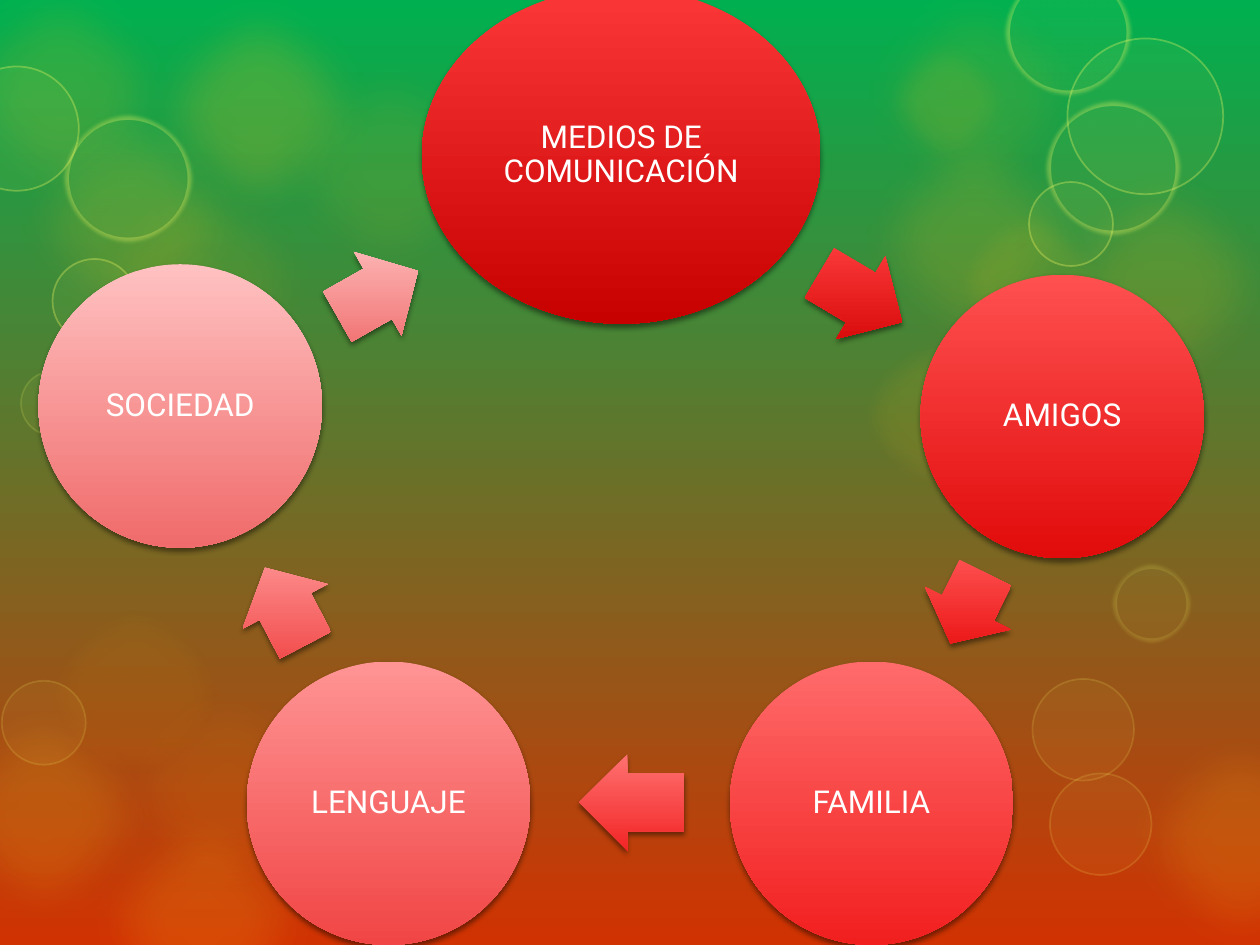
import pptx
import pptx.util
import pptx.dml.color
import pptx.enum.shapes
import pptx.enum.text
import pptx.oxml
import pptx.oxml.ns

Pt = pptx.util.Pt
Kind = pptx.enum.shapes.MSO_SHAPE
qn = pptx.oxml.ns.qn
NS = pptx.oxml.ns.nsdecls("a")


def tint(code):
    return pptx.dml.color.RGBColor.from_string(code)


class Deck:
    font, size, ink, inset = "Roboto", 18, "FFFFFF", 2

    def __init__(self):
        self.file = pptx.Presentation()
        self.file.slide_width, self.file.slide_height = Pt(720), Pt(540)
        self.slide = self.file.slides.add_slide(self.file.slide_layouts[6])

    def blend(self, fill, top, low):
        """Straight gradient from top to bottom."""
        fill.gradient()
        fill.gradient_angle = 270
        for stop, code in zip(fill.gradient_stops, (top, low)):
            stop.color.rgb = tint(code)

    def fade(self, fill, alpha):
        """Opacity in percent for a solid fill."""
        node = fill._xPr.find(qn("a:solidFill"))[0]
        node.append(pptx.oxml.parse_xml(f'<a:alpha {NS} val="{alpha * 1000}"/>'))

    def effect(self, shape, xml):
        shape.shadow.inherit = False
        if xml:
            shape._element.spPr.find(qn("a:effectLst")).append(pptx.oxml.parse_xml(xml))

    def preset(self, kind, x, y, w, h):
        return self.slide.shapes.add_shape(kind, Pt(x), Pt(y), Pt(w), Pt(h))

    def bubble(self, x, y, d, code, alpha, soft=0, line=None):
        """Translucent circle with an optional soft edge and outline."""
        shape = self.preset(Kind.OVAL, x, y, d, d)
        shape.fill.solid()
        shape.fill.fore_color.rgb = tint(code)
        self.fade(shape.fill, alpha)
        if line:
            edge, width, clear = line
            shape.line.width = Pt(width)
            shape.line.fill.solid()
            shape.line.color.rgb = tint(edge)
            self.fade(shape.line.fill, clear)
        else:
            shape.line.fill.background()
        self.effect(shape, soft and f'<a:softEdge {NS} rad="{Pt(soft)}"/>')

    def solid(self, kind, box, top, low):
        """Red gradient shape with a small drop shadow."""
        shape = self.preset(kind, *box)
        self.blend(shape.fill, top, low)
        shape._element.spPr.find(qn("a:gradFill")).set("rotWithShape", "0")
        shape.line.fill.background()
        self.effect(shape, f'<a:outerShdw {NS} blurRad="{Pt(3)}" dist="{Pt(2)}" '
                    'dir="5400000" rotWithShape="0"><a:srgbClr val="000000">'
                    '<a:alpha val="45000"/></a:srgbClr></a:outerShdw>')
        return shape

    def node(self, text, box, top, low):
        frame = self.solid(Kind.OVAL, box, top, low).text_frame
        frame.word_wrap = True
        frame.vertical_anchor = pptx.enum.text.MSO_ANCHOR.MIDDLE
        frame.margin_left = frame.margin_right = Pt(self.inset)
        frame.margin_top = frame.margin_bottom = Pt(self.inset)
        para = frame.paragraphs[0]
        para.alignment = pptx.enum.text.PP_ALIGN.CENTER
        para.line_spacing = 0.9
        run = para.add_run()
        run.text = text
        run.font.name, run.font.size = self.font, Pt(self.size)
        run.font.color.rgb = tint(self.ink)

    def arrow(self, box, turn, top, low):
        shape = self.solid(Kind.RIGHT_ARROW, box, top, low)
        shape.adjustments[0], shape.adjustments[1] = 0.6, 0.5
        shape.rotation = turn


AMBER, LEMON = "FDC61B", "FFFF66"
GLOW = 150  # size of the large soft lights

# Soft lights: x, y, opacity
lights = [(41, 86, 10), (148, 22, 10), (41, 451, 16), (-40, -23, 14),
          (73, -13, 20), (0, 52, 15), (482, -21, 10), (590, 86, 15),
          (634, 405, 16), (-50, 390, 16), (55, 377, 8), (482, 62, 15)]

# Hazy discs: x, y, size, opacity
haze = [(500, 17, 82, 10), (541, 114, 96, 10), (22, 341, 110, 6), (486, 189, 96, 10)]

# Rings: x, y, size, edge width, by edge opacity
rings = {
    30: [(-26, 38, 71, 1), (37, 66, 72, 5), (30, 148, 48, 1), (575, -17, 71, 5),
         (610, 22, 89, 1), (598, 58, 76, 5), (588, 104, 48, 1)],
    15: [(1, 389, 48, 1), (600, 442, 58, 1), (590, 388, 58, 1),
         (636, 323, 44, 5), (12, 212, 37, 1)],
}

# Cycle: text, box, colours; then its arrow: box, turn, colours
SIDE = 162
cycle = [
    ("MEDIOS DE COMUNICACIÓN", (241, -7, 228, 192), "FB3737", "C70000",
     (464.4, 142.6, 55, 55), 30.7, "FF4040", "D10000"),
    ("AMIGOS", (526, 157, SIDE, SIDE), "FF5050", "E10B0B",
     (530.6, 320, 45, 55), 116.3, "FF5353", "E80C0C"),
    ("FAMILIA", (417, 378, SIDE, SIDE), "FF6B6B", "F21F1F",
     (331, 431, 60, 55), 180, "FF7171", "F22525"),
    ("LENGUAJE", (141, 378, SIDE, SIDE), "FF9494", "F14545",
     (138, 319, 50, 55), 242.4, "FF9797", "F14848"),
    ("SOCIEDAD", (22, 151, SIDE, SIDE), "FFC1C1", "F06B6B",
     (189.4, 140.4, 53, 55), 330.4, "FFC1C1", "F06B6B"),
]


def main():
    deck = Deck()

    # Background
    deck.blend(deck.slide.background.fill, "00B050", "D13202")

    # Lights and rings
    for x, y, alpha in lights:
        deck.bubble(x, y, GLOW, AMBER, alpha, 25)
    for x, y, d, alpha in haze:
        deck.bubble(x, y, d, AMBER, alpha, 12)
    for clear, hoops in rings.items():
        for x, y, d, width in hoops:
            soft = 2.5 if width > 1 else 0
            deck.bubble(x, y, d, LEMON, 5, soft, (LEMON, width, clear))

    # Cycle of circles and arrows
    for text, box, top, low, *arrow in cycle:
        deck.node(text, box, top, low)
        deck.arrow(*arrow)

    deck.file.save("out.pptx")


if __name__ == "__main__":
    main()
